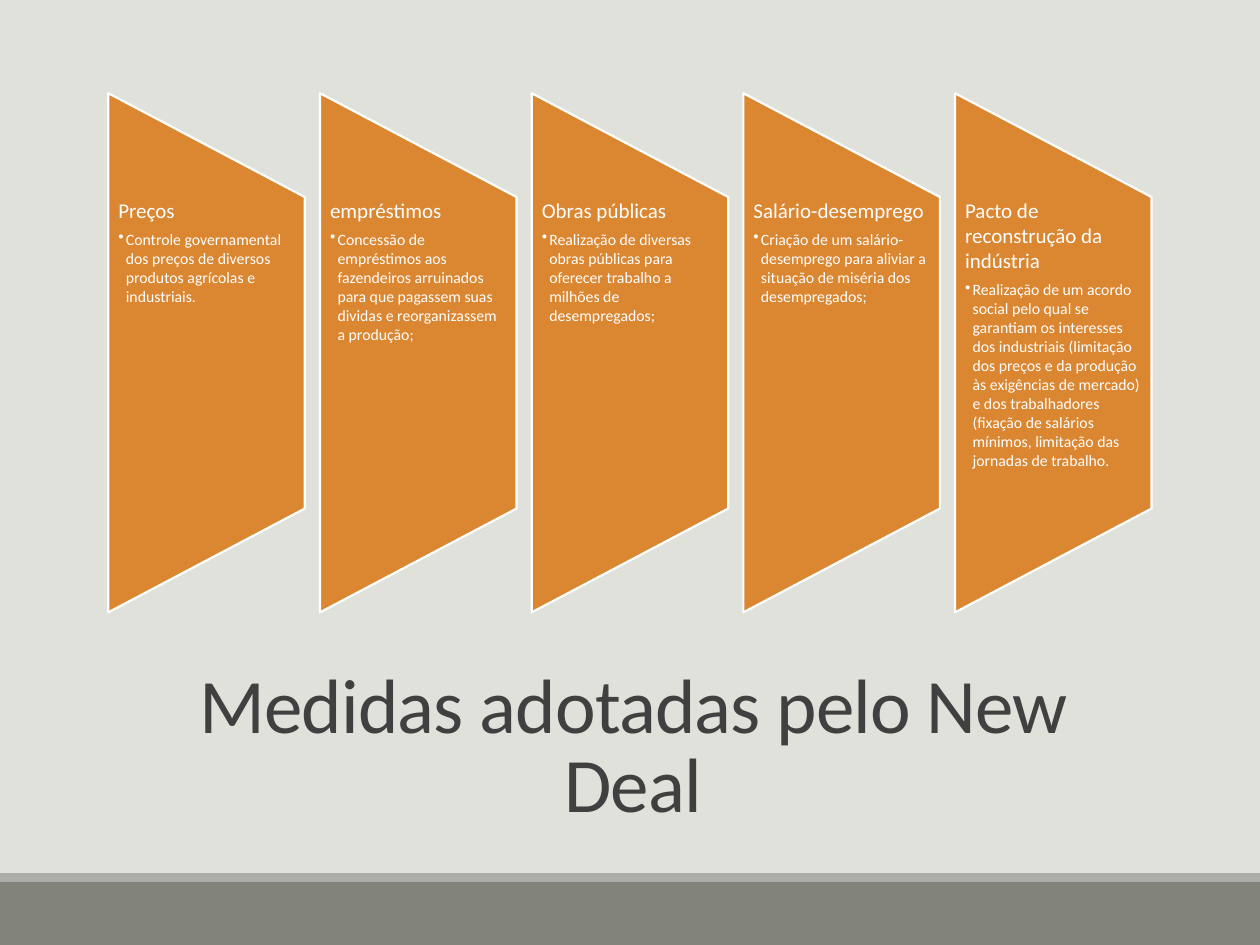
from dataclasses import dataclass

from lxml.etree import SubElement
from pptx import Presentation
from pptx.dml.color import RGBColor
from pptx.enum.shapes import MSO_SHAPE as Shape
from pptx.enum.text import MSO_ANCHOR as Anchor, PP_ALIGN as Align
from pptx.oxml.ns import qn
from pptx.util import Inches, Pt

BACKGROUND = RGBColor(0xE1, 0xE1, 0xDB)
FOOTER = RGBColor(0x82, 0x84, 0x7C)
STRIPE = RGBColor(0xAC, 0xAD, 0xA8)
ORANGE = RGBColor(0xDB, 0x86, 0x31)
WHITE = RGBColor(0xFF, 0xFF, 0xFF)
DARK = RGBColor(0x40, 0x40, 0x40)
FONT = "Calibri"

PANEL_LEFT, PANEL_TOP, PANEL_STEP = 0.86, 0.74, 1.68
PANEL_W, PANEL_H = 1.56, 4.12
TEXT_H = PANEL_H * 0.6
INDENT = Inches(0.06)


@dataclass
class Measure:
    name: str
    detail: str


MEASURES = [
    Measure("Preços", "Controle governamental dos preços de diversos produtos agrícolas e industriais."),
    Measure("empréstimos", "Concessão de empréstimos aos fazendeiros arruinados para que pagassem "
            "suas dividas e reorganizassem a produção;"),
    Measure("Obras públicas", "Realização de diversas obras públicas para oferecer trabalho a "
            "milhões de desempregados;"),
    Measure("Salário-desemprego", "Criação de um salário-desemprego para aliviar a situação de "
            "miséria dos desempregados;"),
    Measure("Pacto de reconstrução da indústria", "Realização de um acordo social pelo qual se "
            "garantiam os interesses dos industriais (limitação dos preços e da produção às "
            "exigências de mercado) e dos trabalhadores (fixação de salários mínimos, limitação "
            "das jornadas de trabalho."),
]


def add_filled(s, kind: Shape, left: float, top: float, width: float, height: float, color: RGBColor):
    sp = s.shapes.add_shape(kind, Inches(left), Inches(top), Inches(width), Inches(height))
    sp.shadow.inherit = False
    sp.fill.solid()
    sp.fill.fore_color.rgb = color
    sp.line.fill.background()
    return sp


def add_text(s, left: float, top: float, width: float, height: float):
    tf = s.shapes.add_textbox(Inches(left), Inches(top), Inches(width), Inches(height)).text_frame
    tf.word_wrap = True
    return tf


def add_run(p, text: str, size: float, color: RGBColor):
    r = p.add_run()
    r.text = text
    r.font.name = FONT
    r.font.size = Pt(size)
    r.font.color.rgb = color
    return r


def add_bullet(p) -> None:
    pPr = p._p.get_or_add_pPr()
    pPr.set("marL", str(INDENT))
    pPr.set("indent", str(-INDENT))
    SubElement(pPr, qn("a:buChar")).set("char", "•")


def add_panel(s, left: float, measure: Measure) -> None:
    shift = (PANEL_H - PANEL_W) / 2
    sp = add_filled(s, Shape.FLOWCHART_MANUAL_OPERATION, left - shift, PANEL_TOP + shift,
                    PANEL_H, PANEL_W, ORANGE)
    sp.rotation = 270
    sp.line.color.rgb = WHITE
    sp.line.width = Pt(1.25)

    tf = add_text(s, left, PANEL_TOP + PANEL_H * 0.2, PANEL_W, TEXT_H)
    tf.margin_left, tf.margin_right = Inches(0.08), Inches(0.09)
    tf.margin_top = tf.margin_bottom = 0
    p = tf.paragraphs[0]
    p.space_after = Pt(4.2)
    add_run(p, measure.name, 12, WHITE)
    p = tf.add_paragraph()
    p.level = 1
    p.space_after = Pt(1.35)
    add_bullet(p)
    add_run(p, measure.detail, 9, WHITE)


def add_title(s, text: str) -> None:
    tf = add_text(s, 0.9, 5.3, 8.25, 1.3)
    tf.vertical_anchor = Anchor.MIDDLE
    p = tf.paragraphs[0]
    p.alignment = Align.CENTER
    p.line_spacing = 0.85
    r = add_run(p, text, 44, DARK)
    r.font._element.set("spc", "-50")


def main() -> None:
    prs = Presentation()
    prs.slide_width, prs.slide_height = Inches(10), Inches(7.5)
    s = prs.slides.add_slide(prs.slide_layouts[6])
    s.background.fill.solid()
    s.background.fill.fore_color.rgb = BACKGROUND
    add_filled(s, Shape.RECTANGLE, 0, 7, 10, 0.5, FOOTER)
    add_filled(s, Shape.RECTANGLE, 0, 6.93, 10, 0.07, STRIPE)
    add_title(s, "Medidas adotadas pelo New Deal")
    for i, measure in enumerate(MEASURES):
        add_panel(s, PANEL_LEFT + i * PANEL_STEP, measure)
    prs.save("out.pptx")


if __name__ == "__main__":
    main()
